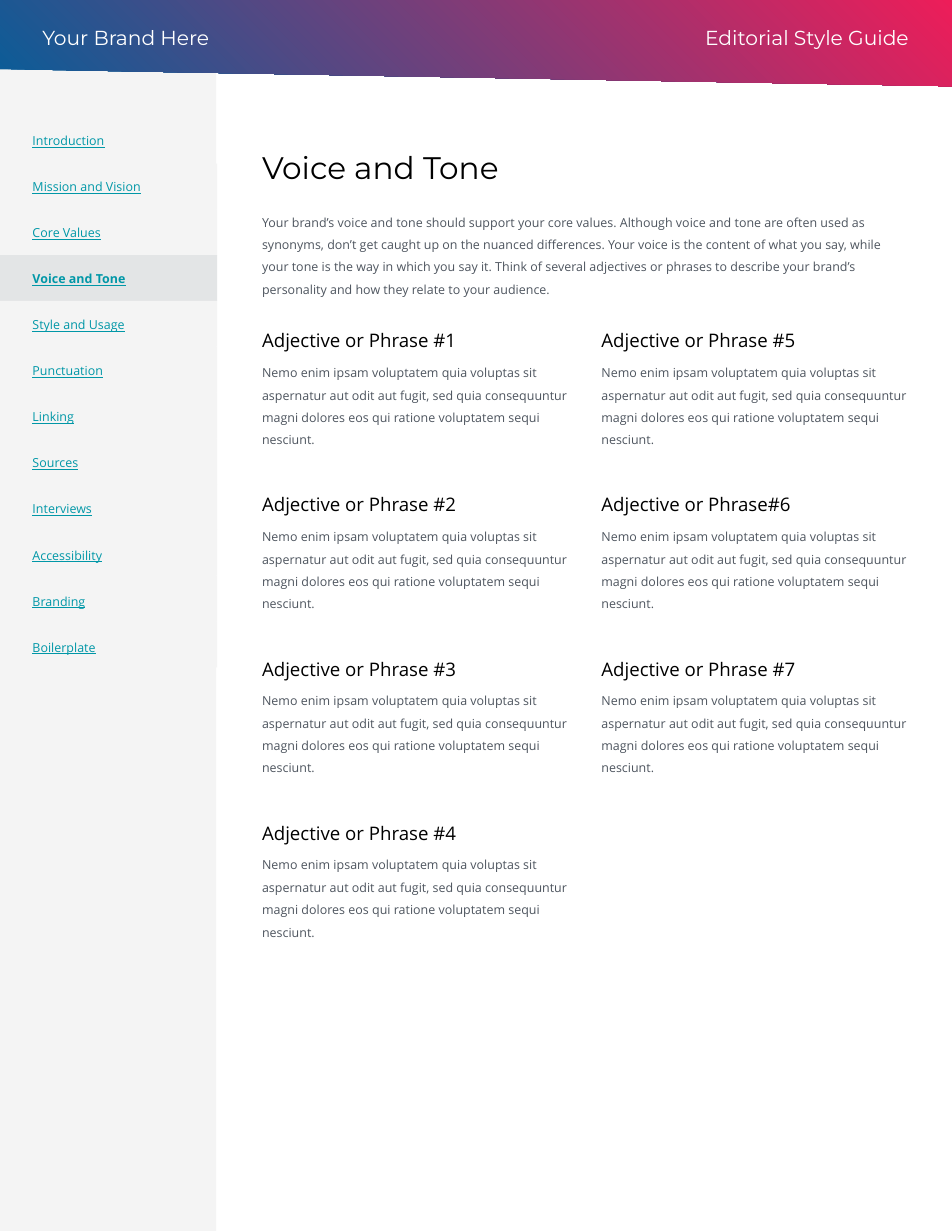
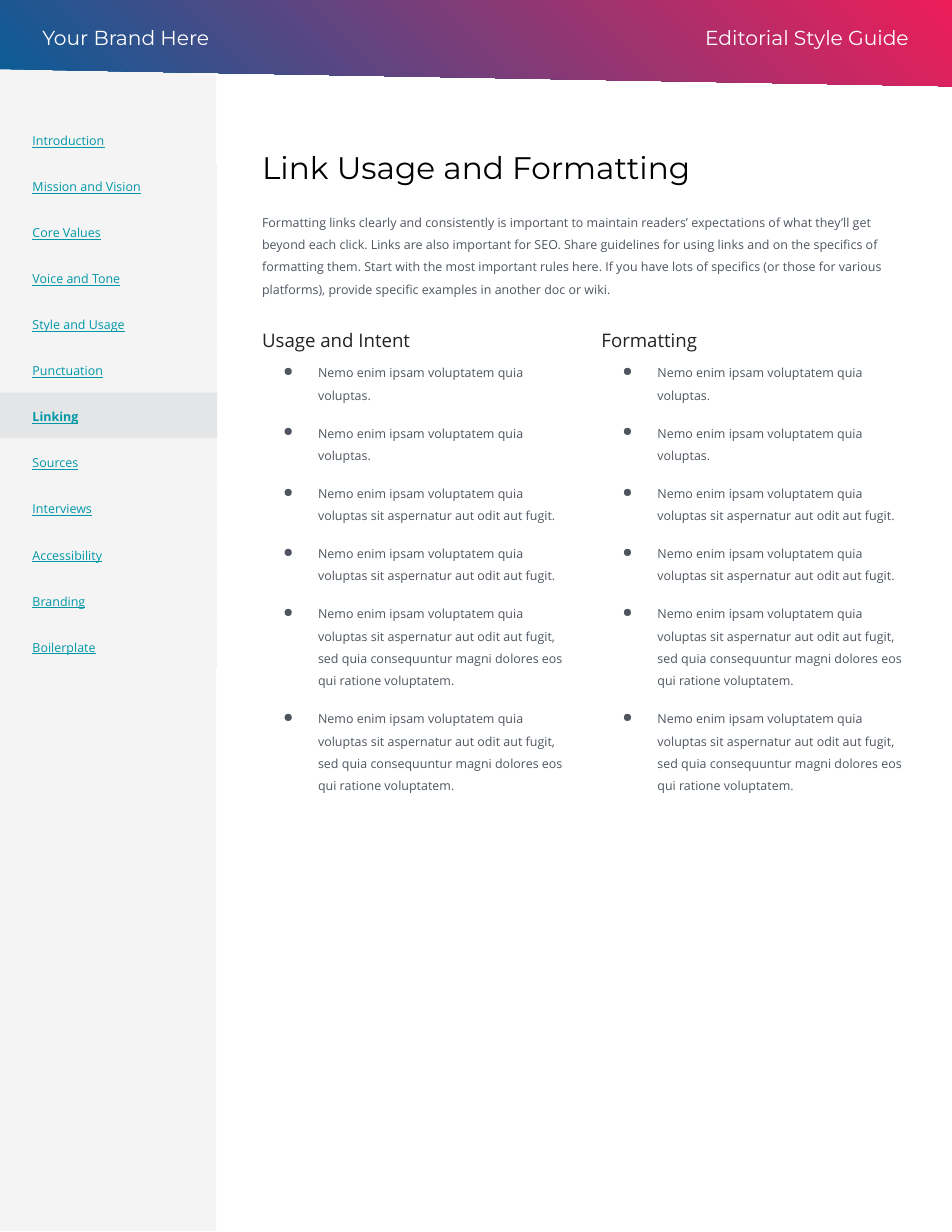
import lxml.etree
import pptx
import pptx.dml.color
import pptx.enum.shapes
import pptx.enum.text
import pptx.oxml.ns
import pptx.util

Inches = pptx.util.Inches
Pt = pptx.util.Pt
Align = pptx.enum.text.PP_ALIGN
Shape = pptx.enum.shapes.MSO_SHAPE

COLORS = {
    "white": "FFFFFF", "black": "000000", "heading": "222222", "body": "4E555F",
    "link": "0097A7", "panel": "F4F4F4", "active": "E3E5E6",
    "band_start": "095D98", "band_end": "ED1D59",
}
HEAD_FONT = "Montserrat"
BODY_FONT = "Open Sans"
COLUMN_LEFTS = [2.34, 5.37]
NAVIGATION = [
    "Introduction", "Mission and Vision", "Core Values", "Voice and Tone",
    "Style and Usage", "Punctuation", "Linking", "Sources", "Interviews",
    "Accessibility", "Branding", "Boilerplate",
]
ROW_HEIGHT = 4.09 / 10

FILLER = "Nemo enim ipsam voluptatem quia voluptas"
DESCRIPTION = (FILLER + " sit aspernatur aut odit aut fugit, sed quia consequuntur "
               "magni dolores eos qui ratione voluptatem sequi nesciunt.")
SHORT = FILLER + "."
MEDIUM = FILLER + " sit aspernatur aut odit aut fugit."
LONG = (FILLER + " sit aspernatur aut odit aut fugit, sed quia consequuntur "
        "magni dolores eos qui ratione voluptatem.")
RULES = [SHORT, SHORT, MEDIUM, MEDIUM, LONG, LONG]

PAGES = [
    {
        "title": "Voice and Tone",
        "active": "Voice and Tone",
        "intro": "Your brand’s voice and tone should support your core values. Although voice "
                 "and tone are often used as synonyms, don’t get caught up on the nuanced "
                 "differences. Your voice is the content of what you say, while your tone is "
                 "the way in which you say it. Think of several adjectives or phrases to "
                 "describe your brand’s personality and how they relate to your audience.",
        "heading_color": "black",
        "bulleted": False,
        "columns": [
            [(f"Adjective or Phrase{label}", [DESCRIPTION]) for label in labels]
            for labels in [[" #1", " #2", " #3", " #4"], [" #5", "#6", " #7"]]
        ],
    },
    {
        "title": "Link Usage and Formatting",
        "active": "Linking",
        "intro": "Formatting links clearly and consistently is important to maintain readers’ "
                 "expectations of what they’ll get beyond each click. Links are also important "
                 "for SEO. Share guidelines for using links and on the specifics of formatting "
                 "them. Start with the most important rules here. If you have lots of specifics "
                 "(or those for various platforms), provide specific examples in another doc "
                 "or wiki.",
        "heading_color": "heading",
        "bulleted": True,
        "columns": [[("Usage and Intent", RULES)], [("Formatting", RULES)]],
    },
]


def prepare_frame(shape, insets):
    frame = shape.text_frame
    frame.word_wrap = True
    frame.auto_size = pptx.enum.text.MSO_AUTO_SIZE.NONE
    frame.margin_left, frame.margin_top, frame.margin_right, frame.margin_bottom = [
        Inches(inset) for inset in insets]
    return frame


def write_paragraph(frame, text, size, font, color, before=0, spacing=1.0, align=Align.LEFT):
    paragraph = frame.paragraphs[0]
    if paragraph.runs:
        paragraph = frame.add_paragraph()
    paragraph.alignment = align
    paragraph.line_spacing = spacing
    paragraph.space_before = Pt(before)
    run = paragraph.add_run()
    run.text = text
    run.font.size = Pt(size)
    run.font.name = font
    run.font.color.rgb = pptx.dml.color.RGBColor.from_string(COLORS[color])
    return paragraph


presentation = pptx.Presentation()
presentation.slide_width = Inches(8.5)
presentation.slide_height = Inches(11)

for page in PAGES:
    slide = presentation.slides.add_slide(presentation.slide_layouts[5])

    bars = [(Shape.RECTANGLE, -0.02, -0.01, 1.95, 11, "panel"),
            (Shape.FLOWCHART_MANUAL_INPUT, -0.02, 0, 8.52, 0.77, None)]
    for row, name in enumerate(NAVIGATION[1:]):
        fill = "active" if name == page["active"] else "panel"
        bars.append((Shape.RECTANGLE, -0.04, 1.46 + row * ROW_HEIGHT, 1.98, ROW_HEIGHT, fill))
    for kind, left, top, width, height, fill in bars:
        shape = slide.shapes.add_shape(
            kind, Inches(left), Inches(top), Inches(width), Inches(height))
        shape.shadow.inherit = False
        shape.line.fill.background()
        if fill:
            shape.fill.solid()
            shape.fill.fore_color.rgb = pptx.dml.color.RGBColor.from_string(COLORS[fill])
        else:
            shape.rotation = 180
            shape._element.spPr.xfrm.set("flipH", "1")
            shape.fill.gradient()
            shape.fill.gradient_angle = 315
            for stop, color in zip(shape.fill.gradient_stops, ["band_start", "band_end"]):
                stop.color.rgb = pptx.dml.color.RGBColor.from_string(COLORS[color])

    for text, left, align in [("Editorial Style Guide", 5.39, Align.RIGHT),
                              ("Your Brand Here", 0.28, Align.LEFT)]:
        label = slide.shapes.add_textbox(Inches(left), Inches(0.13), Inches(2.82), Inches(0.43))
        frame = prepare_frame(label, [0.1, 0.1, 0.1, 0.1])
        write_paragraph(frame, text, 13, HEAD_FONT, "white", align=align)

    title = slide.shapes.title
    title.left, title.top, title.width, title.height = [
        Inches(length) for length in [2.34, 1.09, 5.76, 0.63]]
    frame = prepare_frame(title, [0, 0, 0, 0])
    frame.vertical_anchor = pptx.enum.text.MSO_ANCHOR.MIDDLE
    write_paragraph(frame, page["title"], 20, HEAD_FONT, "black", spacing=1.5)

    intro = slide.shapes.add_textbox(Inches(2.34), Inches(1.75), Inches(5.76), Inches(0.95))
    frame = prepare_frame(intro, [0, 0.1, 0, 0])
    write_paragraph(frame, page["intro"], 8, BODY_FONT, "body", spacing=1.5)

    for left, sections in zip(COLUMN_LEFTS, page["columns"]):
        column = slide.shapes.add_textbox(Inches(left), Inches(2.74), Inches(2.74), Inches(7.47))
        frame = prepare_frame(column, [0, 0.1, 0, 0])
        for section, (heading, items) in enumerate(sections):
            write_paragraph(frame, heading, 12, BODY_FONT, page["heading_color"],
                            before=22.4 if section else 0, spacing=1.5)
            for position, item in enumerate(items):
                paragraph = write_paragraph(frame, item, 8, BODY_FONT, "body",
                                            before=10 if position else 4, spacing=1.5)
                if page["bulleted"]:
                    properties = paragraph._p.get_or_add_pPr()
                    properties.set("marL", str(Inches(0.5)))
                    properties.set("indent", str(Inches(-0.31)))
                    bullet_color = lxml.etree.SubElement(
                        properties, pptx.oxml.ns.qn("a:buClr"))
                    lxml.etree.SubElement(
                        bullet_color, pptx.oxml.ns.qn("a:srgbClr"), val=COLORS["body"])
                    lxml.etree.SubElement(properties, pptx.oxml.ns.qn("a:buChar"), char="●")

    navigation = slide.shapes.add_textbox(Inches(0.29), Inches(1.09), Inches(1.32), Inches(8.46))
    frame = prepare_frame(navigation, [0, 0.1, 0, 0])
    for row, name in enumerate(NAVIGATION):
        paragraph = write_paragraph(frame, name, 8, BODY_FONT, "link", before=20 if row else 0)
        paragraph.runs[0].font.underline = True
        paragraph.runs[0].font.bold = name == page["active"]

presentation.save("out.pptx")
